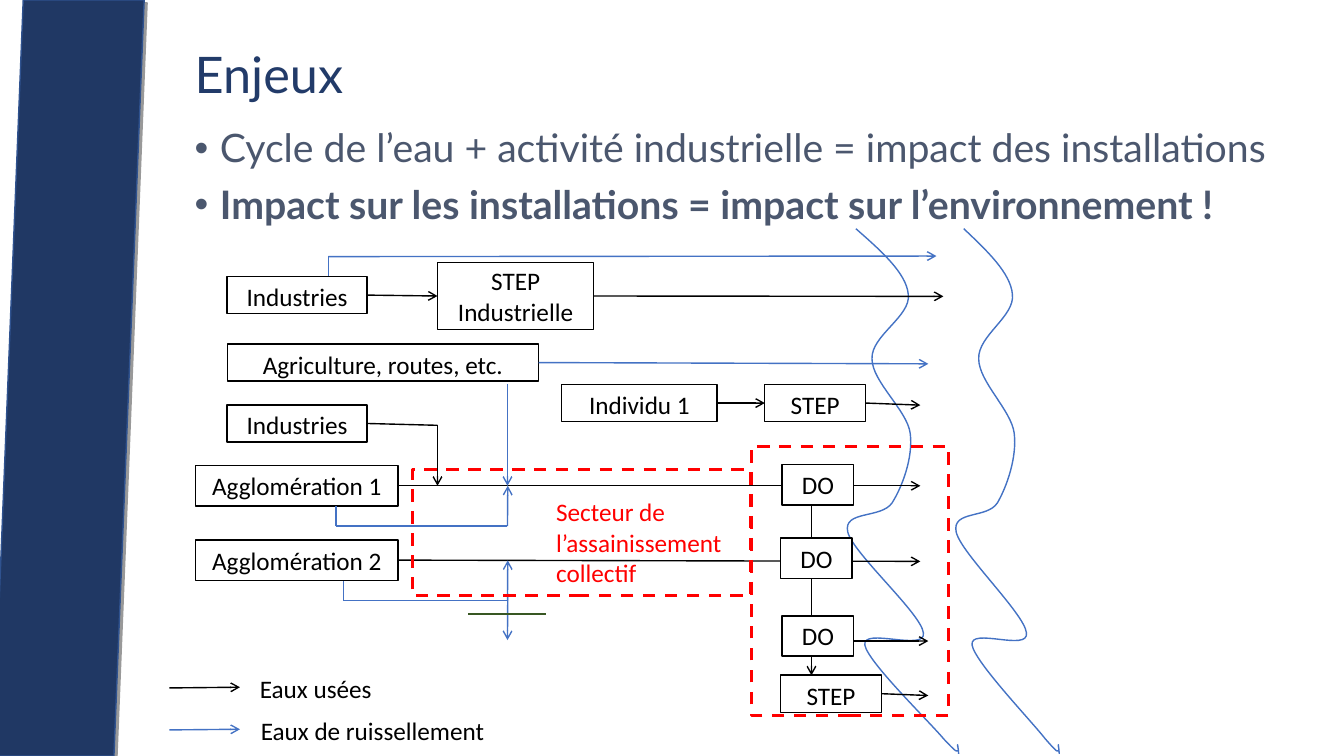
from lxml import etree
from pptx import Presentation
from pptx.dml.color import RGBColor
from pptx.enum.dml import MSO_LINE
from pptx.enum.shapes import MSO_CONNECTOR, MSO_SHAPE
from pptx.enum.text import MSO_ANCHOR, PP_ALIGN
from pptx.oxml.ns import qn
from pptx.util import Pt

RECTANGLE, STRAIGHT, DASH = MSO_SHAPE.RECTANGLE, MSO_CONNECTOR.STRAIGHT, MSO_LINE.DASH
TOP, MIDDLE = MSO_ANCHOR.TOP, MSO_ANCHOR.MIDDLE
LEFT, CENTER = PP_ALIGN.LEFT, PP_ALIGN.CENTER
LEFT_SIDE, RIGHT_SIDE = 1, 3

BLACK, WHITE, RED = "000000", "FFFFFF", "FF0000"
WASTE, RUNOFF, GREEN = BLACK, "4472C4", "385723"
LABEL = {"name": "Calibri", "size": Pt(18)}
TITLE = {"name": "Lato", "size": Pt(36)}
BULLET = {"name": "Lato", "size": Pt(28)}

# Boxes of the diagram: key -> text, left, top, width, height
NODES = {
    "industries_1": ("Industries", 42.3, 35.5, 100, 26.6),
    "town_1": ("Agglomération 1", 19.7, 170.6, 144.7, 28.8),
    "industries_2": ("Industries", 42.3, 127.2, 100, 26.6),
    "industrial_step": ("STEP Industrielle", 192.5, 25.7, 111.6, 47.5),
    "farming": ("Agriculture, routes, etc.", 42.3, 83.7, 222.5, 26.6),
    "town_step": ("STEP", 437.6, 320.2, 72, 26.6),
    "town_2": ("Agglomération 2", 19.7, 223.7, 144.7, 28.8),
    "person": ("Individu 1", 281.3, 112.6, 111, 26.6),
    "person_step": ("STEP", 426.3, 112.6, 72, 26.6),
}
OVERFLOWS = [("DO", 438.7, 169.9, 51.1, 28.8), ("DO", 437.6, 222.4, 51.1, 28.8),
             ("DO", 438.7, 277.9, 51.1, 28.8)]
SECTOR_FRAMES = [(174.5, 173.5, 242, 90), (416.7, 157, 141, 192)]

# Flows: start, end (a node key or a point), colour, arrow
FLOWS = [
    ("industrial_step", (553.9, 49.7), WASTE, True),
    ("industries_1", "industrial_step", WASTE, True),
    ((114.5, 21.3), (548.9, 20.9), RUNOFF, True),
    ((114.5, 35.3), (114.5, 20.9), RUNOFF, False),
    ("farming", (543.1, 97.9), RUNOFF, True),
    ("town_1", (537.4, 185), WASTE, True),
    ("industries_2", (192.5, 141.8), WASTE, False),
    ((192.5, 141.8), (192.5, 185), WASTE, True),
    ("town_2", (537.4, 239), WASTE, True),
    ((119.9, 213.8), (119.9, 199.4), RUNOFF, False),
    ((242.5, 112.3), (242.5, 185), RUNOFF, True),
    ((119.9, 213.8), (242.5, 213.8), RUNOFF, False),
    ("person", "person_step", WASTE, True),
    ("person_step", (537.4, 127.4), WASTE, True),
    ((242.5, 213.8), (242.7, 185), RUNOFF, True),
    ((125.5, 267.1), (125.5, 252.7), RUNOFF, False),
    ((125.5, 267.1), (242.5, 267.1), RUNOFF, False),
    ((242.5, 267.1), (242.7, 238.3), RUNOFF, True),
    ((242.7, 262.1), (242.5, 295.2), RUNOFF, True),
    ((459.6, 247.7), (459.6, 320.4), WASTE, True),
    ((459.6, 194.4), (459.6, 228.2), WASTE, False),
    ("town_step", (543.1, 334.8), WASTE, True),
    ((471.1, 295.9), (543.1, 295.9), WASTE, True),
]

# River bank: start, then curves of two control points and an end
BANK_WIDTH = 83.5
BANK_START = (9.4, 0)
BANK_CURVES = [
    ((27.4, 15.8), (45.4, 31.7), (46.8, 46.8)),
    ((49, 62.6), (20.2, 76.3), (20.9, 92.9)),
    ((20.9, 109.4), (46.1, 129.6), (48.2, 146.2)),
    ((50.4, 163.4), (42.5, 184.3), (35.3, 195.8)),
    ((27.4, 207.4), (0, 200.9), (3.6, 216.7)),
    ((7.2, 231.8), (56.2, 275), (57.6, 288.7)),
    ((59.8, 302.4), (13.7, 284.4), (15.8, 297.4)),
    ((18, 309.6), (61.2, 351.4), (72, 364.3)),
    ((83.5, 376.6), (80.6, 372.2), (82.1, 373)),
    ((83.5, 373.7), (81.4, 367.9), (82.1, 368.6)),
    ((82.1, 368.6), (82.8, 374.4), (82.8, 375.1)),
]


def rgb(hex_code):
    return RGBColor.from_string(hex_code)


def style(shape, fill=None, line=None, width=1.0, dash=None):
    shape.shadow.inherit = False
    if fill:
        shape.fill.solid()
        shape.fill.fore_color.rgb = rgb(fill)
    else:
        shape.fill.background()
    if line:
        shape.line.color.rgb = rgb(line)
        shape.line.width = Pt(width)
    if dash:
        shape.line.dash_style = dash


def write(paragraph, text, color, font):
    paragraph.text = text
    paragraph.font.color.rgb = rgb(color)
    for name, value in font.items():
        setattr(paragraph.font, name, value)


def add_label(slide, text, box, line=BLACK, color=BLACK, align=CENTER, anchor=TOP):
    label = slide.shapes.add_shape(RECTANGLE, *map(Pt, box))
    style(label, WHITE, line)
    label.text_frame.word_wrap = True
    label.text_frame.vertical_anchor = anchor
    paragraph = label.text_frame.paragraphs[0]
    paragraph.alignment = align
    write(paragraph, text, color, LABEL)
    return label


def add_flow(slide, start, end, color, arrow=False, width=1.0):
    flow = slide.shapes.add_connector(STRAIGHT, *map(Pt, (*start, *end)))
    flow.line.color.rgb = rgb(color)
    flow.line.width = Pt(width)
    if arrow:
        etree.SubElement(flow.line._get_or_add_ln(), qn("a:tailEnd"), type="arrow")
    etree.SubElement(flow._element.spPr, qn("a:effectLst"))
    return flow


def draw_band(slide, left, top, width, height, slant):
    builder = slide.shapes.build_freeform(Pt(left), Pt(top + height), scale=1.0)
    corners = [(left + slant, top), (left + width, top), (left + width - slant, top + height)]
    builder.add_line_segments([(Pt(x), Pt(y)) for x, y in corners], close=True)
    band = builder.convert_to_shape()
    style(band, "203864", "2F528F")
    effects = band._element.spPr.find(qn("a:effectLst"))
    shadow = etree.SubElement(effects, qn("a:outerShdw"), dist=str(Pt(3)), dir="2700000")
    shade = etree.SubElement(shadow, qn("a:srgbClr"), val=BLACK)
    etree.SubElement(shade, qn("a:alpha"), val="40000")


def draw_text(slide, box, lines, color, bulleted=False):
    frame = slide.shapes.add_textbox(*map(Pt, box)).text_frame
    frame.word_wrap = True
    for index, (text, font) in enumerate(lines):
        paragraph = frame.add_paragraph() if index else frame.paragraphs[0]
        paragraph.line_spacing = 0.9
        if index:
            paragraph.space_before = Pt(10)
        if bulleted:
            properties = paragraph._p.get_or_add_pPr()
            properties.set("marL", str(Pt(18)))
            properties.set("indent", str(Pt(-18)))
            etree.SubElement(properties, qn("a:buFont"), typeface="Arial")
            etree.SubElement(properties, qn("a:buChar"), char="•")
        write(paragraph, text, color, font)


def draw_bank(slide, left, top, width):
    scale = width / BANK_WIDTH

    def place(x, y):
        return Pt(left + x * scale), Pt(top + y)

    builder = slide.shapes.build_freeform(*place(*BANK_START), scale=1.0)
    points = [place(*point) for curve in BANK_CURVES for point in curve]
    builder.add_line_segments(points, close=False)
    bank = builder.convert_to_shape()
    style(bank, line=RUNOFF)
    # Turn each three segments into one Bézier curve
    segments = list(bank._element.spPr.iter(qn("a:lnTo")))
    for first in range(0, len(segments), 3):
        curve = etree.Element(qn("a:cubicBezTo"))
        segments[first].addprevious(curve)
        for segment in segments[first:first + 3]:
            curve.append(segment[0])
            segment.getparent().remove(segment)


def draw_diagram(slide, left, top):
    def shift(x, y, *size):
        return (left + x, top + y, *size)

    nodes = {}
    for key, (text, *box) in NODES.items():
        anchor = MIDDLE if key == "industrial_step" else TOP
        nodes[key] = add_label(slide, text, shift(*box), anchor=anchor)
    for bank_left, width in ((482, BANK_WIDTH), (559.7, 77.6)):
        draw_bank(slide, left + bank_left, top + 1.4, width)
    # Flows, joined to the nodes they leave or reach
    for start, end, color, arrow in FLOWS:
        ends = [(0, 0) if isinstance(point, str) else shift(*point) for point in (start, end)]
        flow = add_flow(slide, *ends, color, arrow)
        if isinstance(start, str):
            flow.begin_connect(nodes[start], RIGHT_SIDE)
        if isinstance(end, str):
            flow.end_connect(nodes[end], LEFT_SIDE)
    add_flow(slide, shift(214.6, 276.5), shift(270.1, 276.5), GREEN, width=1.5)
    # Storm overflows and collective sector
    for text, *box in OVERFLOWS:
        add_label(slide, text, shift(*box))
    for box in SECTOR_FRAMES:
        frame = slide.shapes.add_shape(RECTANGLE, *map(Pt, shift(*box)))
        style(frame, line=RED, width=2.25, dash=DASH)


def draw_legend(slide, left, top, row_height):
    rows = [("Eaux usées", WASTE, 57.5, 116), ("Eaux de ruissellement", RUNOFF, 58.2, 328.3)]
    for row, (text, color, indent, width) in enumerate(rows):
        y = top + row * row_height
        add_flow(slide, (left, y + 14), (left + 50.4, y + 13.5), color, True)
        add_label(slide, text, (left + indent, y, width, 26.6), line=WHITE, align=LEFT)


def main():
    deck = Presentation()
    deck.slide_width, deck.slide_height = Pt(960), Pt(540)
    slide = deck.slides.add_slide(deck.slide_layouts[6])
    draw_band(slide, -5, 0, 108, 540, slant=21.6)
    add_label(slide, "Secteur de l’assainissement collectif", (390.2, 351.2, 141, 72.7),
              line=WHITE, color=RED, align=LEFT)
    draw_text(slide, (132, 32.4, 793.4, 104.4), [("Enjeux", TITLE)], "223B69")
    draw_text(slide, (132, 88.6, 785, 362), [
        ("Cycle de l’eau + activité industrielle = impact des installations", BULLET),
        ("Impact sur les installations = impact sur l’environnement !", {**BULLET, "bold": True}),
    ], "4B576E", bulleted=True)
    draw_diagram(slide, 120, 162)
    draw_legend(slide, 121, 477.4, 30)
    deck.save("out.pptx")


if __name__ == "__main__":
    main()
